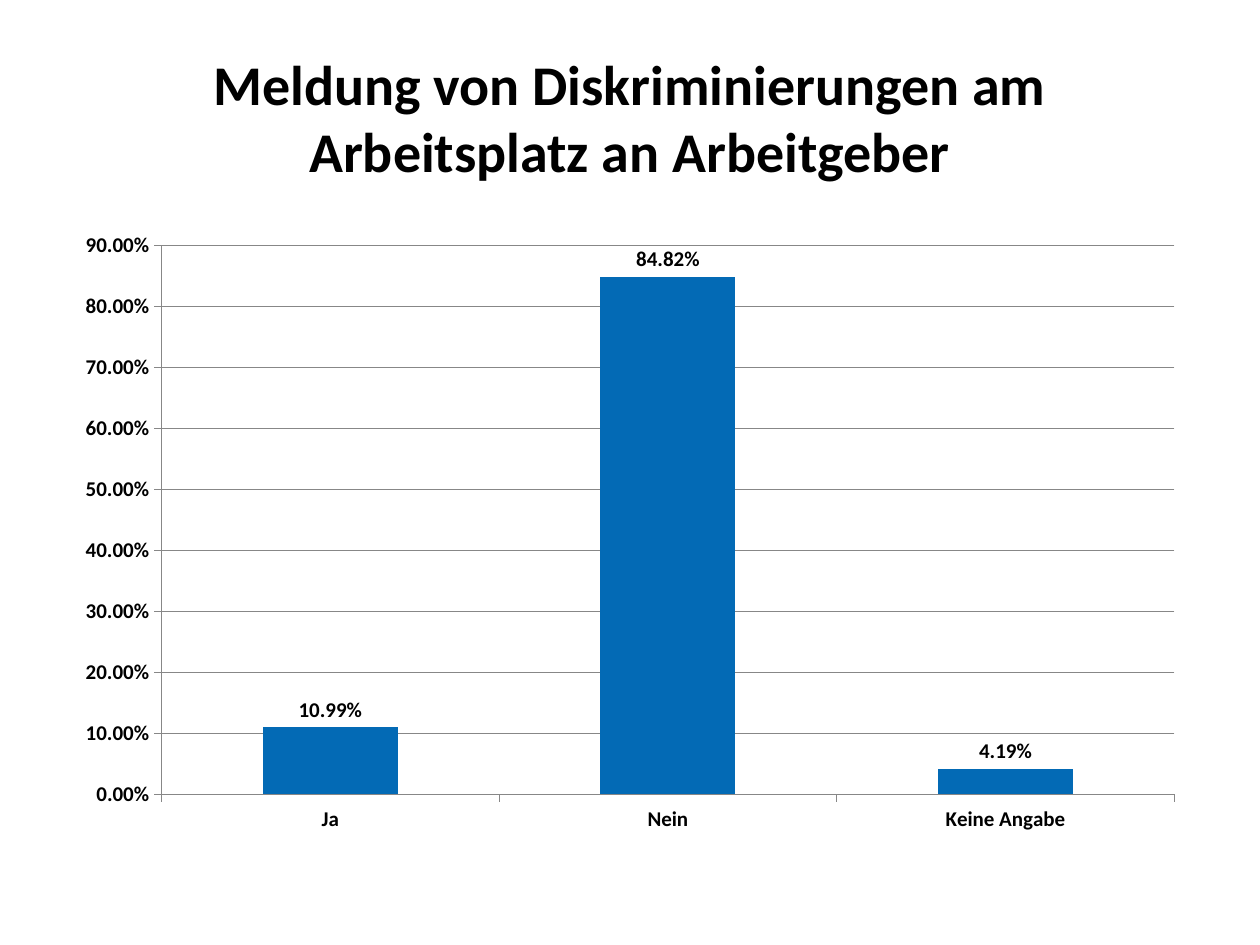
from pptx import Presentation
from pptx.chart.data import CategoryChartData
from pptx.dml.color import RGBColor
from pptx.enum.chart import XL_CHART_TYPE as ChartType, XL_LABEL_POSITION as LabelPosition, XL_TICK_MARK as TickMark
from pptx.enum.text import MSO_ANCHOR as Anchor, PP_ALIGN as Align
from pptx.util import Pt

TITLE = "Meldung von Diskriminierungen am Arbeitsplatz an Arbeitgeber"
ANSWERS = {"Ja": 0.1099, "Nein": 0.8482, "Keine Angabe": 0.0419}
COLORS = {"text": "000000", "bar": "036AB5", "line": "878787"}
PERCENT = "0.00%"
FONT = "Calibri"
WIDTH, HEIGHT, MARGIN = 720, 540, 36
TITLE_TOP, TITLE_HEIGHT = 21.6, 90
CHART_TOP, CHART_HEIGHT = 126, 356.4


def color(name):
    return RGBColor.from_string(COLORS[name])


def style_font(font, size):
    font.name = FONT
    font.size = Pt(size)
    font.bold = True
    font.color.rgb = color("text")


def style_line(line):
    line.color.rgb = color("line")
    line.width = Pt(0.75)


def place(top, height):
    return Pt(MARGIN), Pt(top), Pt(WIDTH - 2 * MARGIN), Pt(height)


def add_title(slide):
    title = slide.shapes.title
    title.left, title.top, title.width, title.height = place(TITLE_TOP, TITLE_HEIGHT)
    text_frame = title.text_frame
    text_frame.text = TITLE
    text_frame.word_wrap = True
    text_frame.vertical_anchor = Anchor.MIDDLE
    paragraph = text_frame.paragraphs[0]
    paragraph.alignment = Align.CENTER
    style_font(paragraph.runs[0].font, 32)


def add_answer_chart(slide):
    data = CategoryChartData(number_format=PERCENT)
    data.categories = list(ANSWERS)
    data.add_series("Series 1", list(ANSWERS.values()))
    frame = slide.shapes.add_chart(
        ChartType.COLUMN_CLUSTERED, *place(CHART_TOP, CHART_HEIGHT), data)
    chart = frame.chart
    chart.has_title = False
    chart.has_legend = False
    style_font(chart.font, 12)

    for axis in (chart.category_axis, chart.value_axis):
        axis.major_tick_mark = TickMark.OUTSIDE
        axis.minor_tick_mark = TickMark.NONE
        style_line(axis.format.line)
    value_axis = chart.value_axis
    value_axis.minimum_scale, value_axis.maximum_scale, value_axis.major_unit = 0, 0.9, 0.1
    value_axis.has_major_gridlines = True
    style_line(value_axis.major_gridlines.format.line)
    value_axis.tick_labels.number_format = PERCENT
    value_axis.tick_labels.number_format_is_linked = False

    plot = chart.plots[0]
    plot.gap_width = 150
    plot.vary_by_categories = False
    series = plot.series[0]
    series.format.fill.solid()
    series.format.fill.fore_color.rgb = color("bar")
    labels = series.data_labels
    labels.show_value = True
    labels.number_format = PERCENT
    labels.number_format_is_linked = False
    labels.position = LabelPosition.OUTSIDE_END
    style_font(labels.font, 12)


def main():
    presentation = Presentation()
    presentation.slide_width, presentation.slide_height = Pt(WIDTH), Pt(HEIGHT)
    slide = presentation.slides.add_slide(presentation.slide_layouts[5])
    add_title(slide)
    add_answer_chart(slide)
    presentation.save("out.pptx")


if __name__ == "__main__":
    main()
